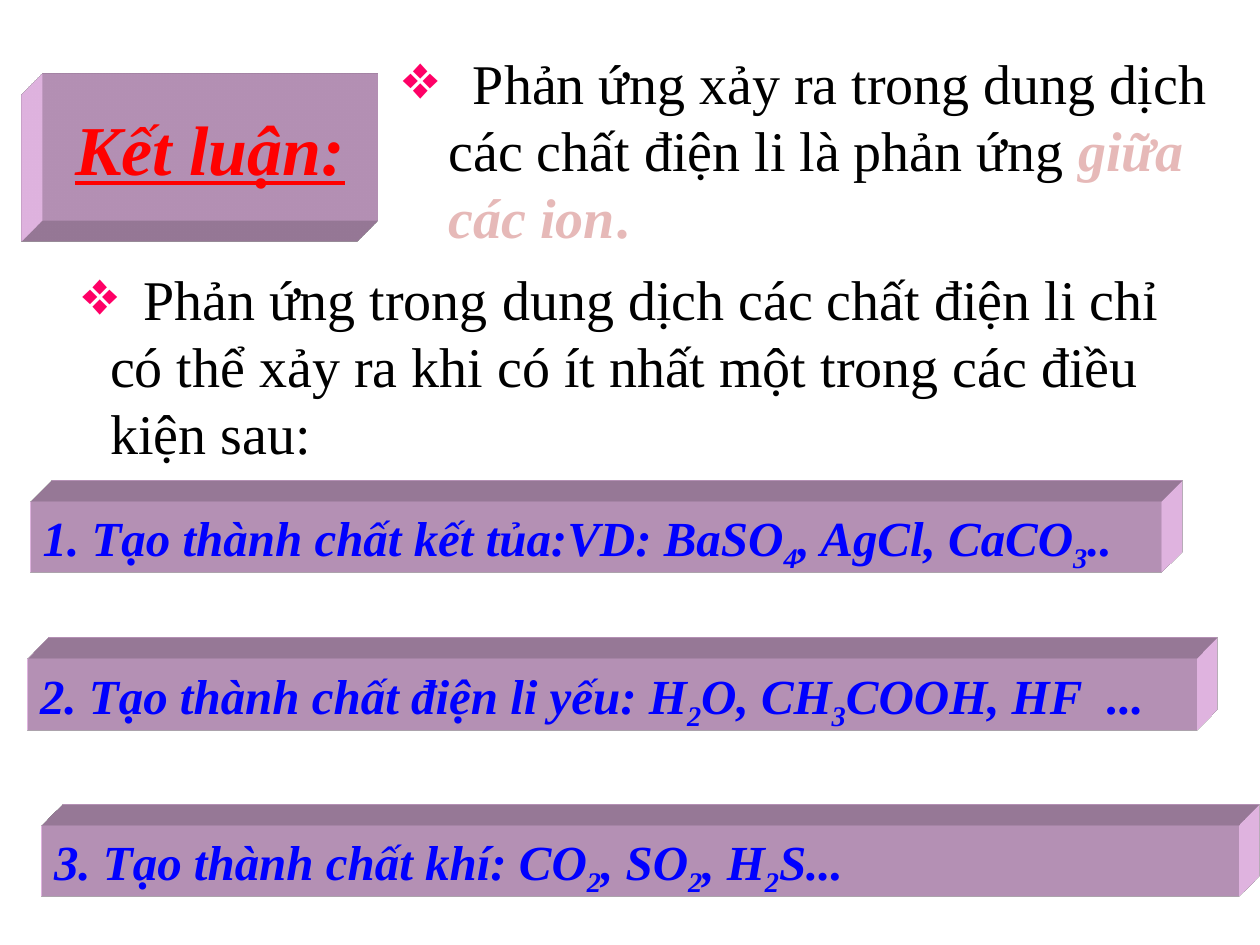
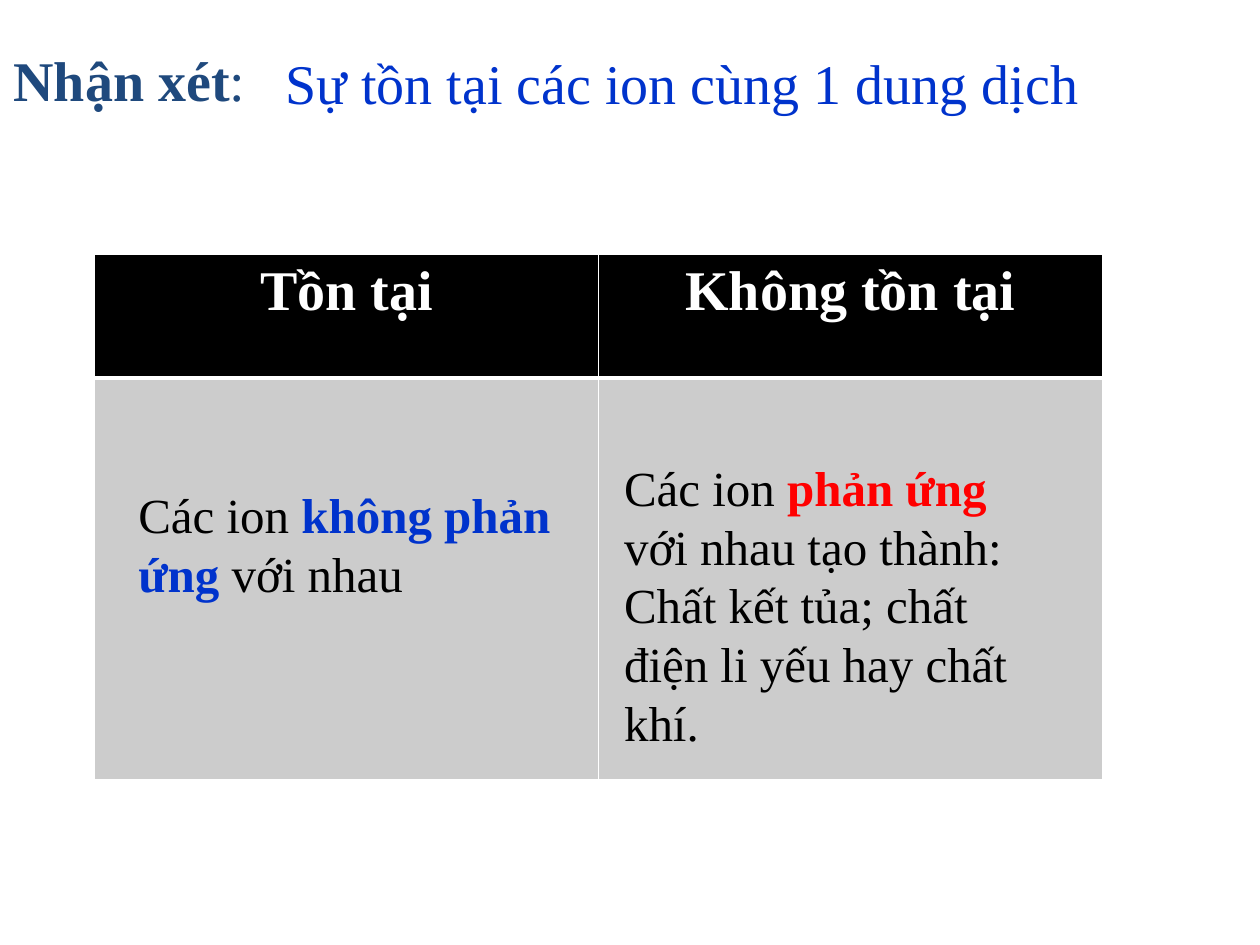
from dataclasses import dataclass

from lxml import etree
from pptx import Presentation
from pptx.dml.color import RGBColor
from pptx.enum import shapes, text
from pptx.oxml import parse_xml
from pptx.oxml.ns import nsdecls, qn
from pptx.util import Pt


@dataclass(frozen=True)
class Theme:
    """Colours, font and type sizes shared by the slides."""
    font: str = "Times New Roman"
    large: int = 32
    medium: int = 28
    heading: int = 40
    black: str = "000000"
    white: str = "FFFFFF"
    red: str = "FF0000"
    blue: str = "0033CC"
    navy: str = "1F497D"
    formula: str = "0000FF"
    pink: str = "E6B9B8"
    outline: str = "C0504D"
    block: str = "FFCCFF"
    bullet: str = "FF0066"
    cell: str = "CCCCCC"


THEME = Theme()
ION = {"bold": True, "color": THEME.pink, "outline": THEME.outline}
FORMULA = {"size": THEME.medium, "color": THEME.formula, "bold": True, "italic": True}
GAP = {"size": THEME.medium, "rpr": {"spc": "700"}}
SUB = {"rpr": {"baseline": "-25000"}}


def child(parent, tag, **values):
    """Append a DrawingML element and return it."""
    return etree.SubElement(parent, qn(f"a:{tag}"), values)


def place(shape, box):
    """Set a shape's left, top, width and height in points."""
    for name, value in zip(("left", "top", "width", "height"), box):
        setattr(shape, name, Pt(value))


def outline_run(run, color):
    """Give the letters of a run a coloured outline."""
    run._r.get_or_add_rPr().insert(0, parse_xml(
        f'<a:ln {nsdecls("a")} w="22225"><a:solidFill>'
        f'<a:srgbClr val="{color}"/></a:solidFill></a:ln>'))


def write(frame, runs, align=text.PP_ALIGN.LEFT, anchor=text.MSO_ANCHOR.TOP, wrap=True, **base):
    """Write one paragraph of (wording, format) runs over a base format."""
    for name, value in {"word_wrap": wrap, "vertical_anchor": anchor,
                        "auto_size": text.MSO_AUTO_SIZE.NONE}.items():
        setattr(frame, name, value)
    return write_paragraph(frame.paragraphs[0], runs, align, **base)


def write_paragraph(paragraph, runs, align, **base):
    """Fill a paragraph with formatted runs."""
    paragraph.alignment = align
    for wording, changes in runs:
        style = {"size": THEME.large, "color": THEME.black, "bold": False, **base, **changes}
        run = paragraph.add_run()
        run.text = wording
        run.font.name = THEME.font
        run.font.size = Pt(style["size"])
        run.font.color.rgb = RGBColor.from_string(style["color"])
        for name in ("bold", "italic", "underline"):
            if name in style:
                setattr(run.font, name, style[name])
        for name, value in style.get("rpr", {}).items():
            run._r.get_or_add_rPr().set(name, value)
        if "outline" in style:
            outline_run(run, style["outline"])
    return paragraph


def add_bullet(paragraph, indent):
    """Hang a coloured diamond bullet in front of a paragraph."""
    props = paragraph._p.get_or_add_pPr()
    for name, value in {"marL": Pt(indent), "indent": -Pt(indent)}.items():
        props.set(name, str(int(value)))
    child(child(props, "buClr"), "srgbClr", val=THEME.bullet)
    child(props, "buFont", typeface=THEME.font)
    child(props, "buChar", char="❖")


def add_note(slide, box, runs, **options):
    """Add a text box and return its paragraph."""
    note = slide.shapes.add_textbox(*map(Pt, box))
    return write(note.text_frame, runs, **options)


def add_block(slide, box, runs, camera, light, **options):
    """Add an extruded rectangle with text on its front."""
    block = slide.shapes.add_shape(shapes.MSO_SHAPE.RECTANGLE, *map(Pt, box))
    block.shadow.inherit = False
    block.fill.solid()
    block.fill.fore_color.rgb = RGBColor.from_string(THEME.block)
    block.line.fill.background()
    props = block._element.spPr
    scene = child(props, "scene3d")
    child(scene, "camera", prst=f"legacyOblique{camera}")
    child(scene, "lightRig", rig="legacyFlat3", dir=light)
    solid = child(props, "sp3d", extrusionH="430200", prstMaterial="legacyMatte")
    for bevel in ("bevelT", "bevelB"):
        child(solid, bevel, w="13500", h="13500", prst="angle")
    child(child(solid, "extrusionClr"), "srgbClr", val=THEME.block)
    write(block.text_frame, runs, **options)


def paint_cell(cell, color, **widths):
    """Fill a cell and draw its white borders, in points."""
    props = cell._tc.get_or_add_tcPr()
    for side in "LRTB":
        line = child(props, f"ln{side}", w=str(int(Pt(widths.get(side, 1)))))
        child(child(line, "solidFill"), "srgbClr", val=THEME.white)
    cell.fill.solid()
    cell.fill.fore_color.rgb = RGBColor.from_string(color)


def add_comparison(slide, box, headings, row_heights):
    """Add a table with a dark heading row above empty cells."""
    table = slide.shapes.add_table(len(row_heights), len(headings), *map(Pt, box)).table
    for row, height in zip(table.rows, row_heights):
        row.height = Pt(height)
    for column, heading in enumerate(headings):
        top, bottom = table.cell(0, column), table.cell(1, column)
        paint_cell(top, THEME.black, B=3)
        paint_cell(bottom, THEME.cell, T=3)
        write_paragraph(top.text_frame.paragraphs[0], [(heading, {})],
                        text.PP_ALIGN.CENTER, color=THEME.white, bold=True)


def build_conclusion(deck):
    """Build the slide with the conclusion and its three conditions."""
    slide = deck.slides.add_slide(deck.slide_layouts[1])
    title = slide.shapes.title._element
    title.getparent().remove(title)
    ions = slide.placeholders[1]
    place(ions, (222, 24, 498, 114))
    add_bullet(write(ions.text_frame, [
        (" ", GAP),
        ("Phản ứng xảy ra trong dung dịch các chất điện li là phản ứng ", {}),
        ("giữa các ion", {**ION, "italic": True}), (".", ION)]), 27)
    add_bullet(add_note(slide, (39, 147.6, 654, 122.4), [
        (" ", GAP),
        ("Phản ứng trong dung dịch các chất điện li chỉ có thể xảy ra "
         "khi có ít nhất một trong các điều kiện sau:", {})]), 16.8)

    conditions = [
        ((17.3, 286.5, 646.6, 41),
         [("1. Tạo thành chất kết tủa:VD: BaSO", {}), ("4", SUB),
          (", AgCl, CaCO", {}), ("3", SUB), ("..", {})]),
        ((15.8, 376.5, 668.2, 41),
         [("2. Tạo thành chất điện li yếu: H", {}), ("2", SUB), ("O, CH", {}),
          ("3", SUB), ("COOH, HF", {}), (" ", GAP), ("...", {})]),
        ((23.8, 471.6, 684, 41),
         [("3. Tạo thành chất khí: CO", {}), ("2", SUB), (", SO", {}),
          ("2", SUB), (", H", {}), ("2", SUB), ("S...", {})]),
    ]
    for box, condition in conditions:
        add_block(slide, box, condition, "TopRight", "b", **FORMULA)
    add_block(slide, (24, 42, 192, 84), [("Kết luận:", {})], "BottomLeft", "t",
              align=text.PP_ALIGN.CENTER, anchor=text.MSO_ANCHOR.MIDDLE, wrap=False,
              size=THEME.heading, color=THEME.red, bold=True, italic=True, underline=True)


def build_remark(deck):
    """Build the slide comparing ions that can and cannot coexist."""
    slide = deck.slides.add_slide(deck.slide_layouts[5])
    centred = {"align": text.PP_ALIGN.CENTER, "anchor": text.MSO_ANCHOR.MIDDLE}
    place(slide.shapes.title, (96, 21.6, 588, 50.4))
    write(slide.shapes.title.text_frame, [("Sự tồn tại các ion cùng 1 dung dịch", {})],
          color=THEME.blue, **centred)
    add_comparison(slide, (54, 145.5, 576, 300), ("Tồn tại", "Không tồn tại"), (70.5, 229.5))
    add_note(slide, (72, 273.6, 258, 75), [
        ("Các ion ", {}), ("không phản ứng ", {"color": THEME.blue, "bold": True}),
        ("với nhau", {})], size=THEME.medium)
    add_note(slide, (349.5, 257.8, 264, 177), [
        ("Các ion ", {}), ("phản ứng ", {"color": THEME.red, "bold": True}),
        ("với nhau tạo thành: Chất kết tủa; chất điện li yếu hay chất khí.", {})],
        size=THEME.medium)
    add_note(slide, (-36, 0, 228, 90), [("Nhận xét", {"bold": True}), (": ", {})],
             color=THEME.navy, **centred)


def main():
    """Build and save both slides."""
    deck = Presentation()
    deck.slide_width, deck.slide_height = Pt(720), Pt(540)
    build_conclusion(deck)
    build_remark(deck)
    deck.save("out.pptx")


if __name__ == "__main__":
    main()
